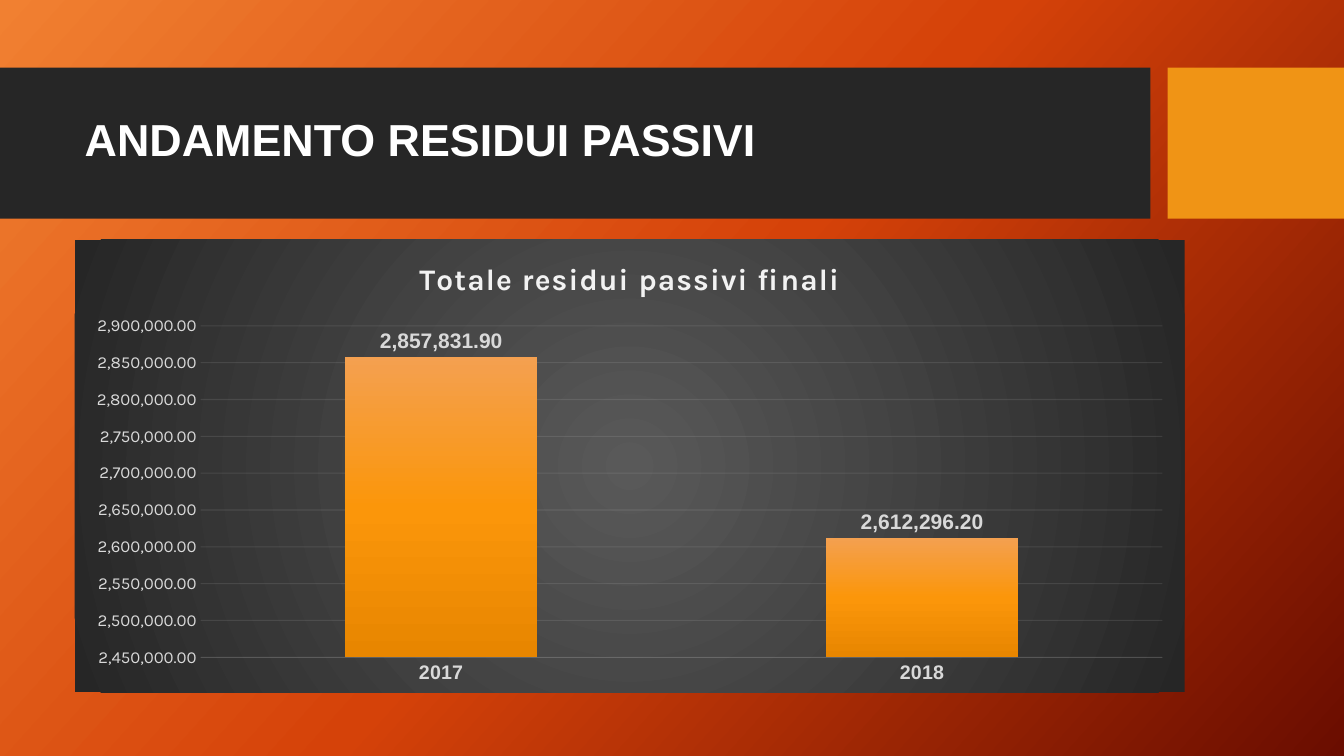
from lxml.etree import SubElement
from pptx import Presentation
from pptx.chart.data import CategoryChartData
from pptx.dml.color import RGBColor
from pptx.enum.chart import XL_CHART_TYPE, XL_LABEL_POSITION, XL_TICK_MARK
from pptx.enum.shapes import MSO_SHAPE
from pptx.enum.text import MSO_ANCHOR, PP_ALIGN
from pptx.oxml import parse_xml
from pptx.oxml.ns import nsdecls, qn
from pptx.util import Inches, Pt

COLORS = {"band": "262626", "accent": "F09415", "title": "FFFFFF",
          "label": "D9D9D9", "light": "F2F2F2"}
BACKGROUND = [(0, "F18031"), (50, "D54209"), (100, "6A0D00")]
CHART_AREA = [(0, "595959"), (100, "262626")]
BARS = [(0, "F4A050"), (50, "FB960A"), (100, "E88600")]
CENTRED = ('<a:path path="circle">'
           '<a:fillToRect l="50000" t="50000" r="50000" b="50000"/></a:path>')


def gradient(stops, direction):
    """Return a gradFill element; direction is its a:lin or a:path XML."""
    gs = "".join(f'<a:gs pos="{pos * 1000}"><a:srgbClr val="{color}"/></a:gs>'
                 for pos, color in stops)
    return parse_xml(f'<a:gradFill {nsdecls("a")} rotWithShape="1">'
                     f'<a:gsLst>{gs}</a:gsLst>{direction}</a:gradFill>')


def set_font(font, name, size, color, bold=False):
    font.name, font.size, font.bold = name, Pt(size), bold
    font.color.rgb = RGBColor.from_string(COLORS[color])


prs = Presentation()
prs.slide_width, prs.slide_height = Inches(13.33), Inches(7.5)
s = prs.slides.add_slide(prs.slide_layouts[5])

# Background
s.background.fill.solid()
bg = s.element.find(".//" + qn("p:bgPr"))
bg.replace(bg[0], gradient(BACKGROUND, f'<a:lin ang="{42 * 60000}" scaled="0"/>'))

# Title on its band
title = s.shapes.title
for left, width, color in [(0, 11.41, "band"), (11.58, 1.75, "accent")]:
    band = s.shapes.add_shape(MSO_SHAPE.RECTANGLE, Inches(left), Inches(0.67),
                              Inches(width), Inches(1.5))
    band.shadow.inherit = False
    band.fill.solid()
    band.fill.fore_color.rgb = RGBColor.from_string(COLORS[color])
    band.line.fill.background()
    title.element.addprevious(band.element)

title.left, title.top = Inches(0.74), Inches(0.82)
title.width, title.height = Inches(10.51), Inches(1.18)
tf = title.text_frame
tf.text = "ANDAMENTO RESIDUI PASSIVI"
tf.vertical_anchor = MSO_ANCHOR.MIDDLE
p = tf.paragraphs[0]
p.alignment = PP_ALIGN.LEFT
p.line_spacing = 0.9
set_font(p.runs[0].font, "Arial", 32, "title", True)

# Chart
data = CategoryChartData(number_format="#,##0.00")
data.categories = ["2017", "2018"]
data.add_series("Totale residui passivi finali", [2857831.9, 2612296.2])
chart = s.shapes.add_chart(XL_CHART_TYPE.COLUMN_CLUSTERED, Inches(0.74), Inches(2.38),
                           Inches(11.01), Inches(4.49), data).chart
set_font(chart.font, "Karla", 10, "title")
chart.has_legend = False
chart.has_title = True
chart.chart_title.include_in_layout = False
chart.chart_title.text_frame.text = "Totale residui passivi finali"
r = chart.chart_title.text_frame.paragraphs[0].runs[0]
set_font(r.font, "Karla", 21.3, "light", True)
r.font.element.set("spc", "100") if hasattr(r.font, "element") else \
    chart.element.find(".//" + qn("a:r")).get_or_add_rPr().set("spc", "100")

cat_axis, val_axis = chart.category_axis, chart.value_axis
for axis in (cat_axis, val_axis):
    axis.major_tick_mark = axis.minor_tick_mark = XL_TICK_MARK.NONE
set_font(cat_axis.tick_labels.font, "Arial", 14, "label", True)
set_font(val_axis.tick_labels.font, "Karla", 12, "label")
val_axis.tick_labels.number_format = "#,##0.00"
val_axis.tick_labels.number_format_is_linked = False
val_axis.minimum_scale, val_axis.maximum_scale = 2450000, 2900000
val_axis.major_unit = 50000
val_axis.format.line.fill.background()
for line in (cat_axis.format.line, val_axis.major_gridlines.format.line):
    line.width = Pt(0.75)
    line.color.rgb = RGBColor.from_string(COLORS["light"])
for color in chart.element.xpath(".//a:ln/a:solidFill/a:srgbClr"):
    SubElement(color, qn("a:alpha")).set("val", "10000")

plot = chart.plots[0]
plot.gap_width = 150
plot.vary_by_categories = False
plot.has_data_labels = True
labels = plot.data_labels
labels.show_value = True
labels.position = XL_LABEL_POSITION.OUTSIDE_END
labels.number_format = "#,##0.00"
labels.number_format_is_linked = False
set_font(labels.font, "Arial", 15, "label", True)

ser = chart.element.find(".//" + qn("c:ser"))
ser.get_or_add_spPr().append(gradient(BARS, f'<a:lin ang="{90 * 60000}" scaled="0"/>'))
area = parse_xml(f'<c:spPr {nsdecls("c", "a")}><a:ln><a:noFill/></a:ln></c:spPr>')
area.insert(0, gradient(CHART_AREA, CENTRED))
chart.element.find(qn("c:chart")).addnext(area)

prs.save("out.pptx")
